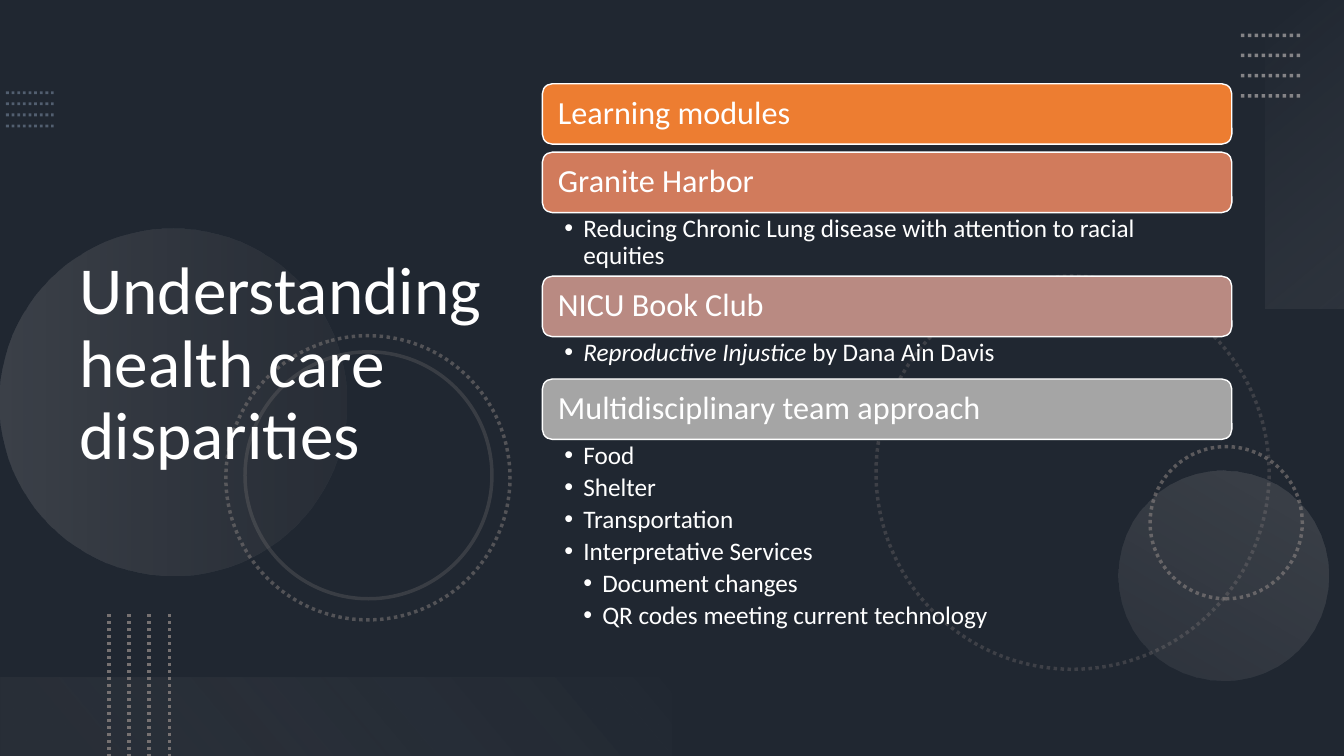
"""Build the slide on understanding health care disparities."""
import pptx
import pptx.util
import pptx.dml.color
import pptx.enum.dml
import pptx.enum.shapes
import pptx.enum.text
import pptx.oxml.ns
import lxml.etree

Pt = pptx.util.Pt
SHAPES = pptx.enum.shapes.MSO_SHAPE
MIDDLE = pptx.enum.text.MSO_ANCHOR.MIDDLE
DOTTED = pptx.enum.dml.MSO_LINE.ROUND_DOT
qn = pptx.oxml.ns.qn


def paint(fill, colour):
    fill.solid()
    fill.fore_color.rgb = pptx.dml.color.RGBColor.from_string(colour)


def fade(part, *opacities):
    for colour, opacity in zip(part.element.iter(qn("a:srgbClr")), opacities):
        lxml.etree.SubElement(colour, qn("a:alpha")).set("val", str(opacity * 1000))


deck = pptx.Presentation()
deck.slide_width, deck.slide_height = Pt(960), Pt(540)
slide = deck.slides.add_slide(deck.slide_layouts[6])
paint(slide.background.fill, "44546A")

veil = slide.shapes.add_shape(SHAPES.RECTANGLE, 0, 0, Pt(960), Pt(540))
veil.shadow.inherit = False
paint(veil.fill, "000000")
fade(veil, 53)
veil.line.fill.background()

rings = [
    (625.7, 197.3, 280.8, 75, DOTTED, 35),
    (821.5, 319, 108.7, 270, DOTTED, 70),
    (161.3, 239.8, 203, 75, DOTTED, 60),
    (175, 251.3, 176.4, 75, None, 30),
]
for left, top, size, turn, dash, opacity in rings:
    ring = slide.shapes.add_shape(SHAPES.OVAL, Pt(left), Pt(top), Pt(size), Pt(size))
    ring.shadow.inherit = False
    ring.rotation = turn
    ring.fill.background()
    paint(ring.line.fill, "767171")
    ring.line.width = Pt(2.5)
    ring.line.dash_style = dash
    fade(ring, opacity)

glows = [
    (SHAPES.OVAL, 0, 163.4, 247.7, 247.7, 270, 90, (0, "AFABAB", 20), (1, "767171", 10)),
    (SHAPES.OVAL, 799.2, 336.2, 149.8, 149.8, 210, 90, (0, "AFABAB", 10), (1, "AFABAB", 20)),
    (SHAPES.RECTANGLE, 822, 82.2, 220.3, 56.2, 270, 140, (0, "F5F5F5", 0), (1, "AFABAB", 10)),
    (SHAPES.RECTANGLE, 0, 483.8, 480, 56.2, 180, 140, (0.1, "767171", 10), (1, "F1F0F0", 0)),
]
for outline, left, top, width, height, turn, angle, *stops in glows:
    glow = slide.shapes.add_shape(outline, Pt(left), Pt(top), Pt(width), Pt(height))
    glow.shadow.inherit = False
    glow.rotation = turn
    glow.line.fill.background()
    glow.fill.gradient()
    glow.fill.gradient_angle = 360 - angle
    for stop, (position, colour, _) in zip(glow.fill.gradient_stops, stops):
        stop.position = position
        stop.color.rgb = pptx.dml.color.RGBColor.from_string(colour)
    fade(glow, *(opacity for _, _, opacity in stops))

dot_rows = [
    (4.3, 66.2, 34, 0, 0, 7.92, "8497B0", 2, 50),
    (886.3, 25.2, 43.2, 0, 0, 14.4, "AFABAB", 2.5, 70),
    (77.8, 438.5, 0, 101.5, 14.4, 0, "767171", 2.5, 100),
]
for left, top, across, down, step_x, step_y, colour, weight, opacity in dot_rows:
    for i in range(4):
        x, y = left + i * step_x, top + i * step_y
        dots = slide.shapes.add_connector(
            pptx.enum.shapes.MSO_CONNECTOR.STRAIGHT, Pt(x), Pt(y), Pt(x + across), Pt(y + down))
        paint(dots.line.fill, colour)
        dots.line.width = Pt(weight)
        dots.line.dash_style = DOTTED
        fade(dots, opacity)
        lxml.etree.SubElement(dots.element.spPr, qn("a:effectLst"))

title = slide.shapes.add_textbox(Pt(49.7), Pt(38.9), Pt(330.5), Pt(444.2)).text_frame
title.word_wrap = True
title.vertical_anchor = MIDDLE
heading = title.paragraphs[0]
heading.line_spacing = 0.9
for i, words in enumerate(["Understanding", "health care", "disparities"]):
    if i:
        heading.add_line_break()
    run = heading.add_run()
    run.text = words
    run.font.size, run.font.name = Pt(48), "Calibri"
    paint(run.font.fill, "FFFFFF")

modules = [
    (59.8, "ED7D31", "Learning modules", 0, []),
    (108.7, "D17B5C", "Granite Harbor", 44.6, [
        (1, [("Reducing Chronic Lung disease with attention to racial equities", False)])]),
    (197.3, "B98A82", "NICU Book Club", 30.2, [
        (1, [("Reproductive Injustice ", True), ("by Dana Ain Davis", False)])]),
    (270.7, "A5A5A5", "Multidisciplinary team approach", 146.2, [
        (1, [("Food", False)]),
        (1, [("Shelter", False)]),
        (1, [("Transportation", False)]),
        (1, [("Interpretative Services", False)]),
        (2, [("Document changes", False)]),
        (2, [("QR codes meeting current technology", False)])]),
]
for top, colour, name, details_height, details in modules:
    banner = slide.shapes.add_shape(
        SHAPES.ROUNDED_RECTANGLE, Pt(387.4), Pt(top), Pt(492.5), Pt(43.2))
    banner.shadow.inherit = False
    paint(banner.fill, colour)
    paint(banner.line.fill, "FFFFFF")
    banner.line.width = Pt(1)
    label = banner.text_frame
    label.word_wrap = True
    label.vertical_anchor = MIDDLE
    label.margin_left = label.margin_right = Pt(9)
    label.paragraphs[0].alignment = pptx.enum.text.PP_ALIGN.LEFT
    label.paragraphs[0].line_spacing = 0.9
    run = label.paragraphs[0].add_run()
    run.text = name
    run.font.size, run.font.name = Pt(23), "Calibri"
    paint(run.font.fill, "FFFFFF")
    if not details:
        continue

    body = slide.shapes.add_textbox(
        Pt(387.4), Pt(top + 43.2), Pt(492.5), Pt(details_height)).text_frame
    body.word_wrap = True
    body.margin_left, body.margin_right = Pt(15.8), Pt(13)
    body.margin_top = body.margin_bottom = Pt(2.2)
    for i, (level, phrases) in enumerate(details):
        item = body.add_paragraph() if i else body.paragraphs[0]
        item.level = level
        item.line_spacing = 0.9
        item.space_after = Pt(3.4)
        indents = item._p.get_or_add_pPr()
        indents.set("marL", str(Pt(13.5 * level)))
        indents.set("indent", str(-Pt(13.5)))
        lxml.etree.SubElement(indents, qn("a:buFont")).set("typeface", "Arial")
        lxml.etree.SubElement(indents, qn("a:buChar")).set("char", "•")
        for words, slanted in phrases:
            run = item.add_run()
            run.text = words
            run.font.size, run.font.name = Pt(18), "Calibri"
            run.font.italic = slanted
            paint(run.font.fill, "FFFFFF")

deck.save("out.pptx")
